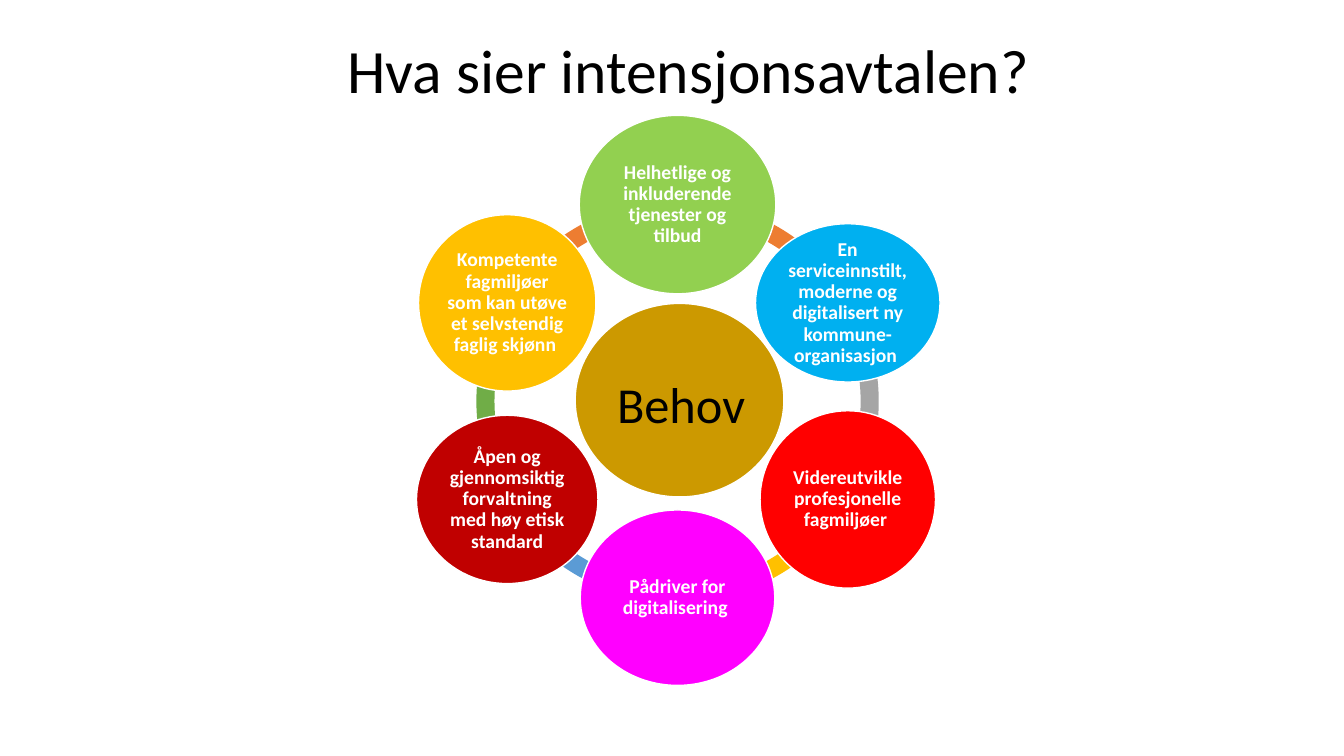
from dataclasses import dataclass
from math import cos, radians, sin

from pptx import Presentation
from pptx.dml.color import RGBColor
from pptx.enum.shapes import MSO_SHAPE
from pptx.enum.text import MSO_ANCHOR, MSO_AUTO_SIZE, PP_ALIGN
from pptx.shapes.autoshape import Shape
from pptx.slide import Slide
from pptx.util import Pt

PX = 9144
RING_X, RING_Y, RING_SIZE, RING_RADIUS = 672, 398, 399, 195
RING_THICKNESS = 0.045
STEP = 60
ADJUSTMENT_PER_DEGREE = 0.6

BLACK = RGBColor(0x00, 0x00, 0x00)
WHITE = RGBColor(0xFF, 0xFF, 0xFF)
OCHRE = RGBColor(0xCC, 0x99, 0x00)
LIME = RGBColor(0x92, 0xD0, 0x50)
SKY = RGBColor(0x00, 0xB0, 0xF0)
RED = RGBColor(0xFF, 0x00, 0x00)
MAGENTA = RGBColor(0xFF, 0x00, 0xFF)
DARK_RED = RGBColor(0xC0, 0x00, 0x00)
AMBER = RGBColor(0xFF, 0xC0, 0x00)
ORANGE = RGBColor(0xED, 0x7D, 0x31)
GRAY = RGBColor(0xA5, 0xA5, 0xA5)
BLUE = RGBColor(0x5B, 0x9B, 0xD5)
GREEN = RGBColor(0x70, 0xAD, 0x47)


@dataclass(frozen=True)
class Goal:
    text: str
    width: int
    height: int
    color: RGBColor
    arc_color: RGBColor


GOALS = [
    Goal("Helhetlige og inkluderende tjenester og tilbud", 195, 177, LIME, ORANGE),
    Goal("En serviceinnstilt, moderne og digitalisert ny kommune-organisasjon ",
         183, 157, SKY, GRAY),
    Goal("Videreutvikle profesjonelle fagmiljøer ", 174, 176, RED, AMBER),
    Goal("Pådriver for digitalisering ", 193, 174, MAGENTA, BLUE),
    Goal("Åpen og gjennomsiktig forvaltning med høy etisk standard",
         180, 167, DARK_RED, GREEN),
    Goal("Kompetente fagmiljøer som kan utøve et selvstendig faglig skjønn ",
         176, 175, AMBER, ORANGE),
]


def write(shape: Shape, text: str, *, size: int, color: RGBColor,
          bold: bool = False, spacing: float = 1.0,
          inset_x: int = 10, inset_y: int = 5) -> None:
    frame = shape.text_frame
    frame.word_wrap = True
    frame.auto_size = MSO_AUTO_SIZE.NONE
    frame.vertical_anchor = MSO_ANCHOR.MIDDLE
    frame.margin_left = frame.margin_right = inset_x * PX
    frame.margin_top = frame.margin_bottom = inset_y * PX
    paragraph = frame.paragraphs[0]
    paragraph.alignment = PP_ALIGN.CENTER
    paragraph.line_spacing = spacing
    paragraph.space_before = Pt(0)
    run = paragraph.add_run()
    run.text = text
    run.font.name = "Calibri"
    run.font.size = Pt(size)
    run.font.bold = bold
    run.font.color.rgb = color


def add_filled(slide: Slide, kind: MSO_SHAPE, center_x: float, center_y: float,
               width: int, height: int, color: RGBColor) -> Shape:
    shape = slide.shapes.add_shape(
        kind, round((center_x - width / 2) * PX), round((center_y - height / 2) * PX),
        width * PX, height * PX)
    shape.shadow.inherit = False
    shape.fill.solid()
    shape.fill.fore_color.rgb = color
    return shape


def add_arc(slide: Slide, start: int, color: RGBColor) -> None:
    arc = add_filled(slide, MSO_SHAPE.BLOCK_ARC, RING_X, RING_Y,
                     RING_SIZE, RING_SIZE, color)
    arc.line.fill.background()
    arc.adjustments[0] = start % 360 * ADJUSTMENT_PER_DEGREE
    arc.adjustments[1] = (start + STEP) % 360 * ADJUSTMENT_PER_DEGREE
    arc.adjustments[2] = RING_THICKNESS


def add_circle(slide: Slide, center_x: float, center_y: float,
               width: int, height: int, color: RGBColor) -> Shape:
    circle = add_filled(slide, MSO_SHAPE.OVAL, center_x, center_y, width, height, color)
    circle.line.color.rgb = WHITE
    circle.line.width = Pt(1)
    return circle


def add_goal(slide: Slide, goal: Goal, angle: int) -> None:
    circle = add_circle(slide, RING_X + RING_RADIUS * cos(radians(angle)),
                        RING_Y + RING_RADIUS * sin(radians(angle)),
                        goal.width, goal.height, goal.color)
    write(circle, goal.text, size=14, color=WHITE, bold=True, spacing=0.9,
          inset_x=2, inset_y=2)


def main() -> None:
    presentation = Presentation()
    presentation.slide_width = 1333 * PX
    presentation.slide_height = 750 * PX
    slide = presentation.slides.add_slide(presentation.slide_layouts[5])

    title = slide.shapes.title
    title.left, title.top, title.width, title.height = 108 * PX, 0, 1150 * PX, 145 * PX
    write(title, "Hva sier intensjonsavtalen?", size=44, color=BLACK, spacing=0.9)

    angles = [270 + STEP * index for index in range(len(GOALS))]
    for goal, angle in reversed(list(zip(GOALS, angles))):
        add_arc(slide, angle, goal.arc_color)
    add_circle(slide, 674, 397, 207, 192, OCHRE)
    for goal, angle in zip(GOALS, angles):
        add_goal(slide, goal, angle)

    needs = slide.shapes.add_textbox(581 * PX, 365 * PX, 189 * PX, 71 * PX)
    write(needs, "Behov", size=36, color=BLACK)
    presentation.save("out.pptx")


if __name__ == "__main__":
    main()
